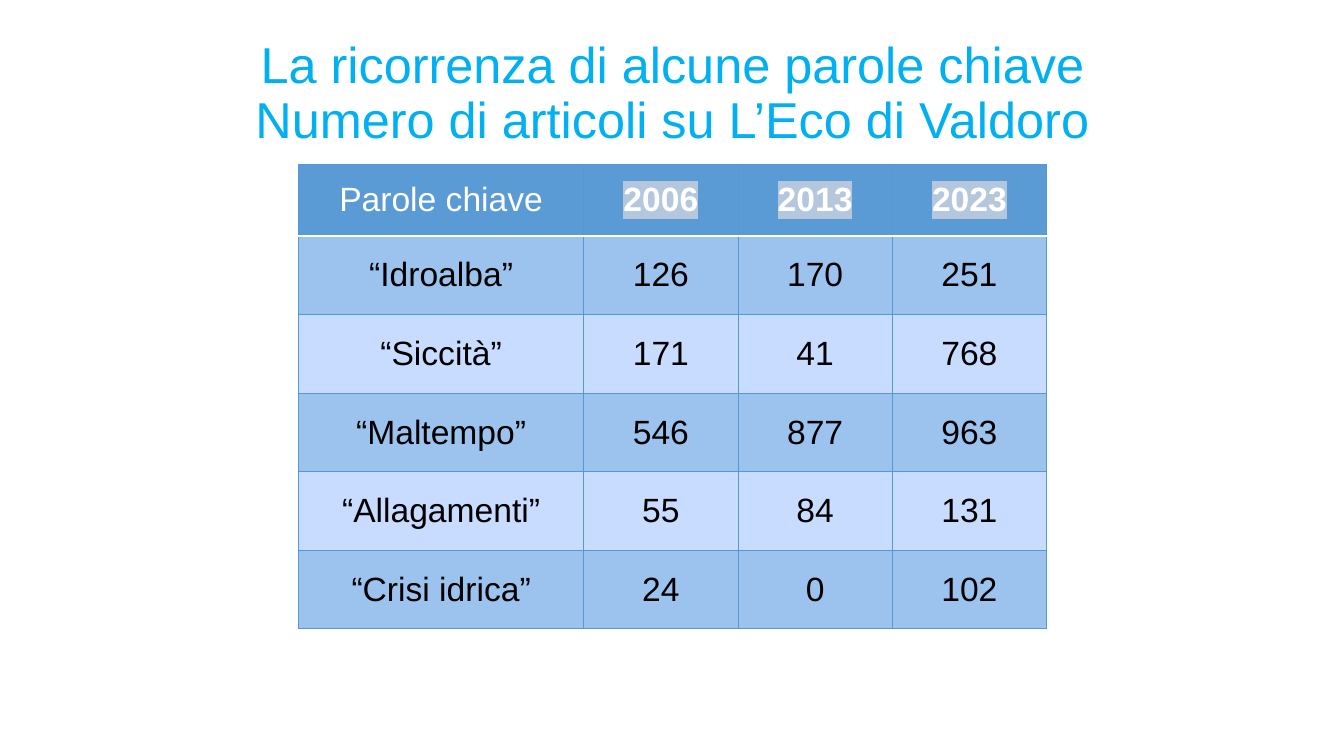
from lxml import etree
from pptx import Presentation
from pptx.dml.color import RGBColor
from pptx.enum.text import MSO_ANCHOR, MSO_AUTO_SIZE, PP_ALIGN
from pptx.oxml.ns import qn
from pptx.util import Inches, Pt

MIDDLE = MSO_ANCHOR.MIDDLE
CENTER = PP_ALIGN.CENTER
NO_AUTOFIT = MSO_AUTO_SIZE.NONE

TITLE_ONLY = 5
TITLE_SIZE = 36
TITLE_COLOR = "00B0F0"
HEADER_FILL = "5B9BD5"
ROW_FILLS = ("9CC2EE", "C7DCFF")
GRID_LINE = ("5698D3", 0.75)
HEADER_RULE = ("FFFFFF", 2)
YEAR_HIGHLIGHT = "B4C7DC"

TITLE_LINES = ("La ricorrenza di alcune parole chiave",
               "Numero di articoli su L’Eco di Valdoro")
KEYWORD_COUNTS = (
    ("Parole chiave", "2006", "2013", "2023"),
    ("“Idroalba”", "126", "170", "251"),
    ("“Siccità”", "171", "41", "768"),
    ("“Maltempo”", "546", "877", "963"),
    ("“Allagamenti”", "55", "84", "131"),
    ("“Crisi idrica”", "24", "0", "102"),
)
COLUMN_WIDTHS = (2.83, 1.53, 1.53, 1.53)
ROW_HEIGHTS = (0.71,) + (0.78,) * 5


def rgb(hex_color):
    return RGBColor.from_string(hex_color)


def apply(target, **values):
    for name, value in values.items():
        setattr(target, name, value)


def format_run(run, size, color, bold=False):
    apply(run.font, name="Arial", size=Pt(size), bold=bold)
    run.font.color.rgb = rgb(color)


def add_color(parent, tag, hex_color):
    holder = etree.SubElement(parent, qn(tag))
    etree.SubElement(holder, qn("a:srgbClr"), val=hex_color)
    return holder


def highlight(run, hex_color):
    """Mark the run's background; the element must follow its solid fill."""
    properties = run.font._element
    mark = add_color(properties, "a:highlight", hex_color)
    properties.find(qn("a:solidFill")).addnext(mark)


def set_borders(cell, top, bottom):
    properties = cell._tc.get_or_add_tcPr()
    sides = {"L": GRID_LINE, "R": GRID_LINE, "T": top, "B": bottom}
    for side, (color, width) in sides.items():
        line = etree.SubElement(properties, qn(f"a:ln{side}"), w=str(Pt(width)))
        add_color(line, "a:solidFill", color)


def place_title(slide, left, top, width, height):
    title = slide.shapes.title
    apply(title, left=Inches(left), top=Inches(top),
          width=Inches(width), height=Inches(height))
    frame = title.text_frame
    apply(frame, margin_left=0, margin_right=0, margin_top=0, margin_bottom=0,
          vertical_anchor=MIDDLE, word_wrap=True, auto_size=NO_AUTOFIT)
    paragraph = frame.paragraphs[0]
    paragraph.text = "\v".join(TITLE_LINES)
    apply(paragraph, alignment=CENTER, line_spacing=0.9)
    for run in paragraph.runs:
        format_run(run, TITLE_SIZE, TITLE_COLOR)
    for line_break in paragraph._p.findall(qn("a:br")):
        etree.SubElement(line_break, qn("a:rPr"), sz=str(TITLE_SIZE * 100))


def fill_cell(cell, text, row, column):
    is_header = row == 0
    is_year = is_header and column > 0
    set_borders(cell,
                top=HEADER_RULE if row == 1 else GRID_LINE,
                bottom=HEADER_RULE if is_header else GRID_LINE)
    cell.fill.solid()
    cell.fill.fore_color.rgb = rgb(HEADER_FILL if is_header else ROW_FILLS[(row - 1) % 2])
    cell.vertical_anchor = MIDDLE
    paragraph = cell.text_frame.paragraphs[0]
    paragraph.alignment = CENTER
    run = paragraph.add_run()
    run.text = text
    format_run(run, 24, "FFFFFF" if is_header else "000000", bold=is_year)
    if is_year:
        highlight(run, YEAR_HIGHLIGHT)


def place_keyword_table(slide, left, top):
    table = slide.shapes.add_table(
        len(ROW_HEIGHTS), len(COLUMN_WIDTHS), Inches(left), Inches(top),
        Inches(sum(COLUMN_WIDTHS)), Inches(sum(ROW_HEIGHTS))).table
    for column, width in zip(table.columns, COLUMN_WIDTHS):
        column.width = Inches(width)
    for row, height in zip(table.rows, ROW_HEIGHTS):
        row.height = Inches(height)
    for row, texts in enumerate(KEYWORD_COUNTS):
        for column, text in enumerate(texts):
            fill_cell(table.cell(row, column), text, row, column)


def main():
    presentation = Presentation()
    apply(presentation, slide_width=Inches(13.33), slide_height=Inches(7.5))
    slide = presentation.slides.add_slide(presentation.slide_layouts[TITLE_ONLY])
    place_keyword_table(slide, 2.96, 1.63)
    place_title(slide, 1.98, 0.42, 9.38, 1.04)
    presentation.save("out.pptx")


if __name__ == "__main__":
    main()
